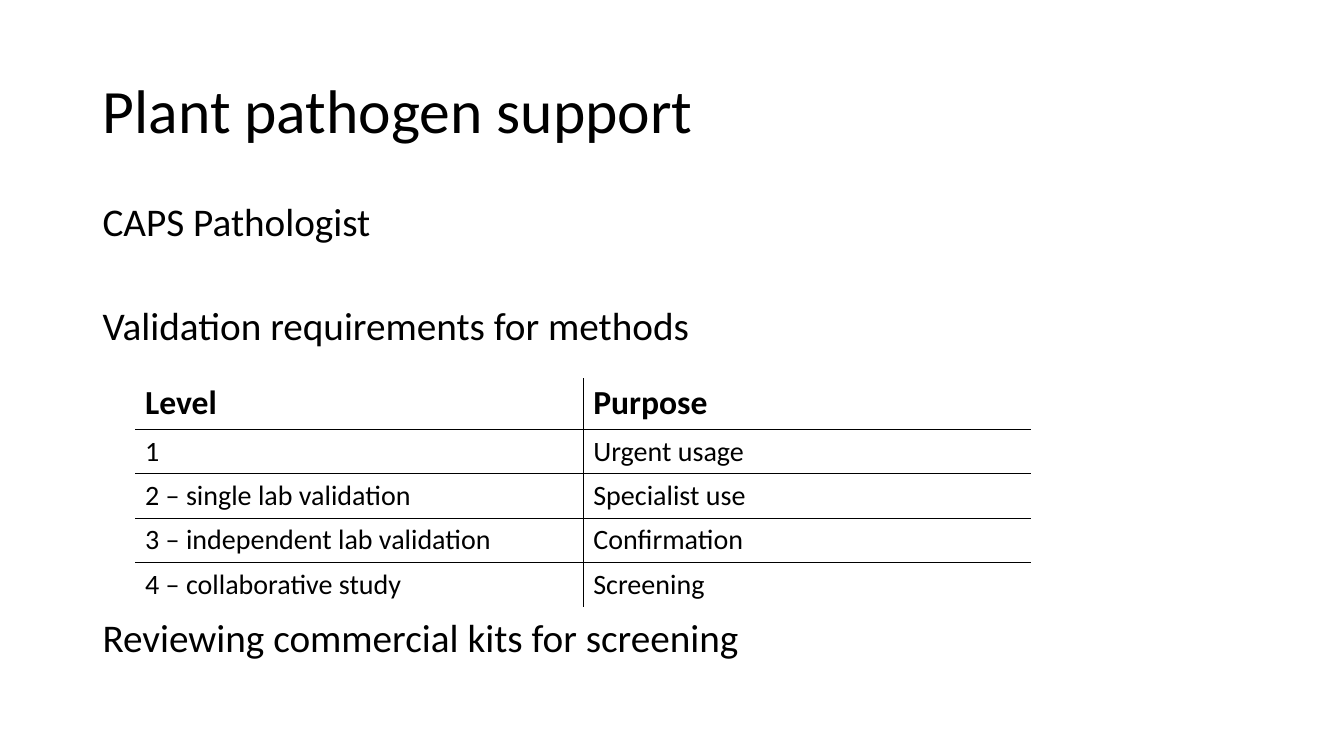
from lxml.etree import SubElement
from pptx import Presentation
from pptx.dml.color import RGBColor
from pptx.enum.text import MSO_ANCHOR, PP_ALIGN
from pptx.oxml.ns import qn
from pptx.util import Inches, Pt

FONT = "Calibri"
BLACK = "000000"
TITLE_BOX = (0.92, 0.4, 11.5, 1.45)
BODY_BOX = (0.92, 2, 11.5, 4.76)
TABLE_BOX = (1.34, 3.75, 8.89, 2.27)
HEADER_SHARE = 0.225
TOPICS = [
    ("CAPS Pathologist", 10),
    ("Validation requirements for methods", 47),
    ("Reviewing commercial kits for screening", 196),
]
LEVELS = [
    ("Level", "Purpose"),
    ("1", "Urgent usage"),
    ("2 – single lab validation", "Specialist use"),
    ("3 – independent lab validation", "Confirmation"),
    ("4 – collaborative study", "Screening"),
]


def color(value):
    return RGBColor.from_string(value)


def style(paragraph, size, bold=False):
    paragraph.alignment = PP_ALIGN.LEFT
    paragraph.font.name = FONT
    paragraph.font.size = Pt(size)
    paragraph.font.bold = bold
    paragraph.font.color.rgb = color(BLACK)


def add_title(slide, box):
    title = slide.shapes.title
    title.left, title.top, title.width, title.height = map(Inches, box)
    frame = title.text_frame
    frame.text = "Plant pathogen support"
    frame.vertical_anchor = MSO_ANCHOR.MIDDLE
    paragraph = frame.paragraphs[0]
    paragraph.line_spacing = 0.9
    style(paragraph, 44)


def add_topics(slide, box):
    frame = slide.shapes.add_textbox(*map(Inches, box)).text_frame
    frame.word_wrap = True
    frame.text = "\n".join(text for text, gap in TOPICS)
    for paragraph, (text, gap) in zip(frame.paragraphs, TOPICS):
        paragraph.line_spacing = 0.8
        paragraph.space_before = Pt(gap)
        style(paragraph, 28)


def set_borders(cell, visible_sides):
    cell.fill.background()
    properties = cell._tc.get_or_add_tcPr()
    for index, side in enumerate("LRTB"):
        line = SubElement(properties, qn(f"a:ln{side}"), w=str(Pt(1)))
        if side in visible_sides:
            fill = SubElement(line, qn("a:solidFill"))
            SubElement(fill, qn("a:srgbClr"), val=BLACK)
        else:
            SubElement(line, qn("a:noFill"))
        properties.insert(index, line)


def add_levels(slide, box):
    left, top, width, height = box
    row_count, column_count = len(LEVELS), len(LEVELS[0])
    table = slide.shapes.add_table(row_count, column_count, *map(Inches, box)).table
    table.horz_banding = False
    for column in table.columns:
        column.width = Inches(width / column_count)
    header_height = height * HEADER_SHARE
    for row_index, row in enumerate(table.rows):
        is_header = row_index == 0
        body_height = (height - header_height) / (row_count - 1)
        row.height = Inches(header_height if is_header else body_height)
        for column_index, cell in enumerate(row.cells):
            cell.text = LEVELS[row_index][column_index]
            style(cell.text_frame.paragraphs[0], 24 if is_header else 20, is_header)
            sides = "R" if column_index == 0 else "L"
            sides += "" if is_header else "T"
            sides += "B" if row_index < row_count - 1 else ""
            set_borders(cell, sides)


def main():
    deck = Presentation()
    deck.slide_width, deck.slide_height = Inches(13.33), Inches(7.5)
    slide = deck.slides.add_slide(deck.slide_layouts.get_by_name("Title Only"))
    add_title(slide, TITLE_BOX)
    add_topics(slide, BODY_BOX)
    add_levels(slide, TABLE_BOX)
    deck.save("out.pptx")


if __name__ == "__main__":
    main()
